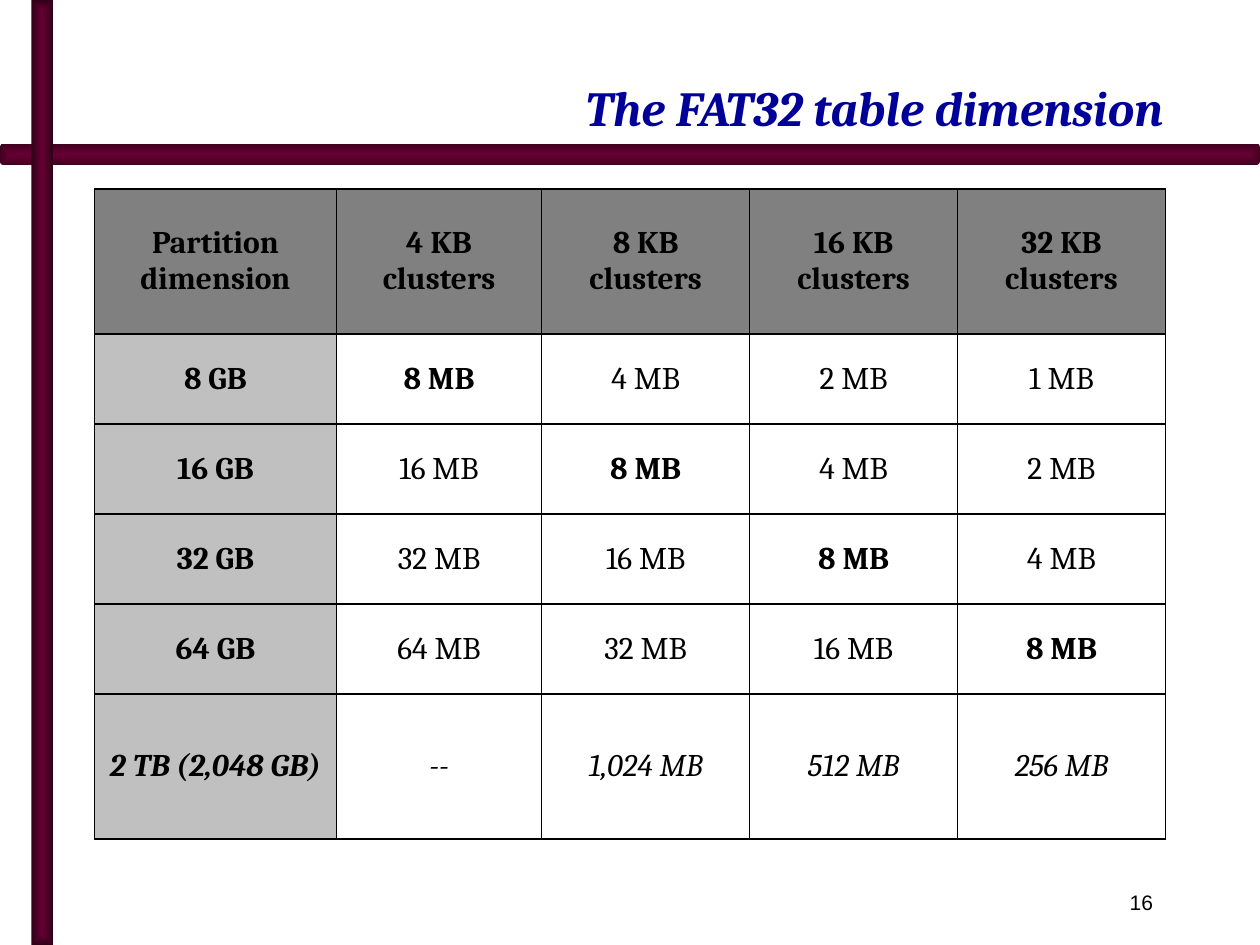
import pptx
import pptx.util
import pptx.dml.color
import pptx.enum.shapes
import pptx.enum.text
import pptx.oxml
import pptx.oxml.ns

TITLE = "The FAT32 table dimension"
PAGE_NUMBER = "16"
ROWS = [
    ["Partition dimension", "4 KB clusters", "8 KB clusters", "16 KB clusters", "32 KB clusters"],
    ["8 GB", "8 MB", "4 MB", "2 MB", "1 MB"],
    ["16 GB", "16 MB", "8 MB", "4 MB", "2 MB"],
    ["32 GB", "32 MB", "16 MB", "8 MB", "4 MB"],
    ["64 GB", "64 MB", "32 MB", "16 MB", "8 MB"],
    ["2 TB (2,048 GB)", "--", "1,024 MB", "512 MB", "256 MB"],
]
HIGHLIGHT = "8 MB"
COL_WIDTHS = [1.92, 1.63] + [1.65] * 3
ROW_HEIGHTS = [1.15] + [0.715] * 4 + [1.15]
COLORS = {
    "title": "000099", "text": "000000", "border": "000000",
    "header": "808080", "side": "C0C0C0",
    "bar": "660033", "bar_h_edge": "410020", "bar_v_edge": "2F0018",
}
SLIDE_W, SLIDE_H = 10, 7.5
MARGIN = 0.75

Inches, Pt = pptx.util.Inches, pptx.util.Pt
SHAPE = pptx.enum.shapes.MSO_SHAPE
ALIGN = pptx.enum.text.PP_ALIGN
ANCHOR = pptx.enum.text.MSO_ANCHOR
NS = pptx.oxml.ns.nsdecls("a")


def rgb(name):
    return pptx.dml.color.RGBColor.from_string(COLORS[name])


def set_text(tf, text, size=18, font="Cambria", color="text", bold=False,
             italic=False, align=ALIGN.CENTER):
    p = tf.paragraphs[0]
    p.alignment = align
    r = p.add_run()
    r.text = text
    r.font.size, r.font.name = Pt(size), font
    r.font.bold, r.font.italic = bold, italic
    r.font.color.rgb = rgb(color)


def add_bar(slide, kind, box, edge):
    """Add a bar whose colour darkens from its centre to its edge."""
    sp = slide.shapes.add_shape(kind, *map(Inches, box))
    sp.shadow.inherit = False
    sp.line.fill.background()
    sp.fill.gradient()
    for stop, name in zip(sp.fill.gradient_stops, ("bar", edge)):
        stop.color.rgb = rgb(name)
    lin = sp.fill._fill._gradFill.find(pptx.oxml.ns.qn("a:lin"))
    lin.getparent().replace(lin, pptx.oxml.parse_xml(
        f'<a:path {NS} path="rect">'
        '<a:fillToRect l="50000" t="50000" r="50000" b="50000"/></a:path>'))


def add_borders(cell):
    tc_pr = cell._tc.get_or_add_tcPr()
    for side in "LRTB":
        tc_pr.append(pptx.oxml.parse_xml(
            f'<a:ln{side} {NS} w="{Pt(1)}"><a:solidFill>'
            f'<a:srgbClr val="{COLORS["border"]}"/></a:solidFill></a:ln{side}>'))


def add_cluster_table(slide):
    frame = slide.shapes.add_table(
        len(ROWS), len(COL_WIDTHS), Inches(MARGIN), Inches(SLIDE_H / 5),
        Inches(sum(COL_WIDTHS)), Inches(sum(ROW_HEIGHTS)))
    table = frame.table
    table.first_row = table.horz_banding = False
    for col, width in zip(table.columns, COL_WIDTHS):
        col.width = Inches(width)
    for row, height in zip(table.rows, ROW_HEIGHTS):
        row.height = Inches(height)
    for i, values in enumerate(ROWS):
        for j, value in enumerate(values):
            cell = table.cell(i, j)
            cell.vertical_anchor = ANCHOR.MIDDLE
            add_borders(cell)
            if i == 0 or j == 0:
                cell.fill.solid()
                cell.fill.fore_color.rgb = rgb("header" if i == 0 else "side")
            else:
                cell.fill.background()
            set_text(cell.text_frame, value,
                     bold=i == 0 or j == 0 or value == HIGHLIGHT,
                     italic=i == len(ROWS) - 1)


def main():
    prs = pptx.Presentation()
    prs.slide_width, prs.slide_height = Inches(SLIDE_W), Inches(SLIDE_H)
    slide = prs.slides.add_slide(prs.slide_layouts[5])

    add_bar(slide, SHAPE.ROUNDED_RECTANGLE, (0, 1.14, SLIDE_W, 0.17), "bar_h_edge")
    add_bar(slide, SHAPE.RECTANGLE, (0.25, 0, 0.17, SLIDE_H), "bar_v_edge")

    title = slide.shapes.title
    title.left, title.top, title.width, title.height = map(Inches, (0.83, 0.17, 8.5, 0.96))
    title.text_frame.auto_size = pptx.enum.text.MSO_AUTO_SIZE.NONE
    title.text_frame.vertical_anchor = ANCHOR.BOTTOM
    set_text(title.text_frame, TITLE, size=28, color="title", bold=True,
             italic=True, align=ALIGN.RIGHT)

    add_cluster_table(slide)

    number = slide.shapes.add_textbox(*map(Inches, (MARGIN, 7.01, 8.5, 0.3)))
    number.text_frame.word_wrap = True
    set_text(number.text_frame, PAGE_NUMBER, size=12, font="Arial", align=ALIGN.RIGHT)

    prs.save("out.pptx")


if __name__ == "__main__":
    main()
